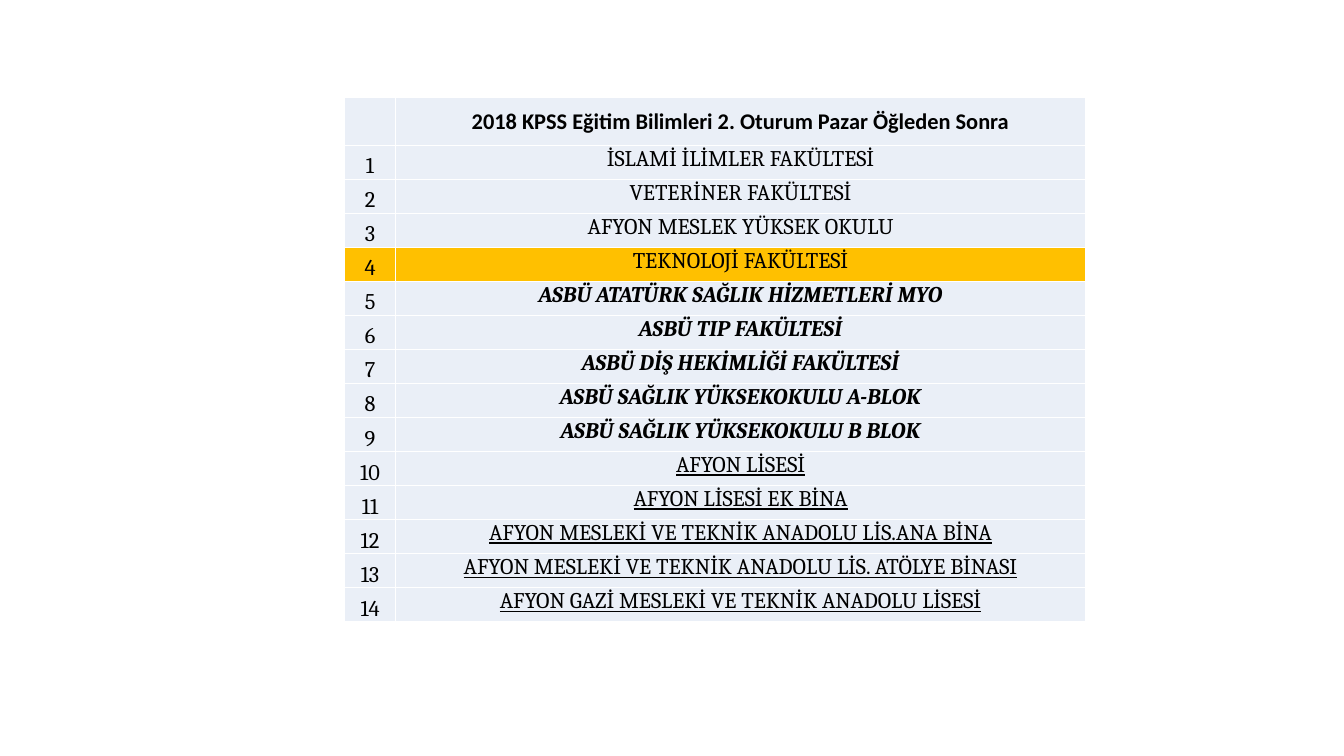
from lxml.etree import SubElement
from pptx import Presentation
from pptx.dml.color import RGBColor
from pptx.enum.text import MSO_ANCHOR, PP_ALIGN
from pptx.oxml.ns import qn
from pptx.util import Inches, Pt

COLORS = {"band": "EAEFF7", "highlight": "FFC000", "border": "FFFFFF", "text": "000000"}
HEADING = "2018 KPSS Eğitim Bilimleri 2. Oturum Pazar Öğleden Sonra"
FACULTIES = [
    "İSLAMİ İLİMLER FAKÜLTESİ",
    "VETERİNER FAKÜLTESİ",
    "AFYON MESLEK YÜKSEK OKULU",
    "TEKNOLOJİ FAKÜLTESİ",
]
HEALTH_SCHOOLS = [
    "ASBÜ ATATÜRK SAĞLIK HİZMETLERİ MYO",
    "ASBÜ TIP FAKÜLTESİ",
    "ASBÜ DİŞ HEKİMLİĞİ FAKÜLTESİ",
    "ASBÜ SAĞLIK YÜKSEKOKULU A-BLOK",
    "ASBÜ SAĞLIK YÜKSEKOKULU B BLOK",
]
HIGH_SCHOOLS = [
    "AFYON LİSESİ",
    "AFYON LİSESİ EK BİNA",
    "AFYON MESLEKİ VE TEKNİK ANADOLU LİS.ANA BİNA",
    "AFYON MESLEKİ VE TEKNİK ANADOLU LİS. ATÖLYE BİNASI",
    "AFYON GAZİ MESLEKİ VE TEKNİK ANADOLU LİSESİ",
]
BUILDINGS = FACULTIES + HEALTH_SCHOOLS + HIGH_SCHOOLS
HIGHLIGHTED = "TEKNOLOJİ FAKÜLTESİ"
NUMBER_WIDTH = 0.5
HEADING_HEIGHT = 0.47


def paint_cell(cell, color):
    """Give the cell thin borders on all sides and a solid fill."""
    properties = cell._tc.get_or_add_tcPr()
    for side in ("a:lnL", "a:lnR", "a:lnT", "a:lnB"):
        border = SubElement(properties, qn(side), w=str(Pt(1)))
        solid = SubElement(border, qn("a:solidFill"))
        SubElement(solid, qn("a:srgbClr"), val=COLORS["border"])
    cell.fill.solid()
    cell.fill.fore_color.rgb = RGBColor.from_string(COLORS[color])


def write_cell(cell, text, anchor, font_name="Cambria", bold=False, italic=False, underline=False):
    cell.margin_left = cell.margin_right = cell.margin_top = Inches(0.01)
    cell.margin_bottom = 0
    cell.vertical_anchor = anchor
    cell.text = text
    paragraph = cell.text_frame.paragraphs[0]
    paragraph.alignment = PP_ALIGN.CENTER
    font = paragraph.font
    font.name, font.size = font_name, Pt(16)
    font.bold, font.italic, font.underline = bold, italic, underline
    font.color.rgb = RGBColor.from_string(COLORS["text"])


def add_building_table(slide, left, top, width, height):
    table = slide.shapes.add_table(
        len(BUILDINGS) + 1, 2, Inches(left), Inches(top), Inches(width), Inches(height)
    ).table
    table.columns[0].width = Inches(NUMBER_WIDTH)
    table.columns[1].width = Inches(width - NUMBER_WIDTH)
    for row in table.rows:
        row.height = Inches((height - HEADING_HEIGHT) / len(BUILDINGS))
    table.rows[0].height = Inches(HEADING_HEIGHT)

    for cell in table.rows[0].cells:
        paint_cell(cell, "band")
    write_cell(table.cell(0, 1), HEADING, MSO_ANCHOR.MIDDLE, "Calibri", bold=True)

    for number, building in enumerate(BUILDINGS, start=1):
        number_cell, building_cell = table.rows[number].cells
        for cell in (number_cell, building_cell):
            paint_cell(cell, "highlight" if building == HIGHLIGHTED else "band")
        write_cell(number_cell, str(number), MSO_ANCHOR.BOTTOM)
        is_health = building in HEALTH_SCHOOLS
        write_cell(building_cell, building, MSO_ANCHOR.TOP, bold=is_health,
                   italic=is_health, underline=building in HIGH_SCHOOLS)


def main():
    presentation = Presentation()
    presentation.slide_width = Inches(13.33)
    presentation.slide_height = Inches(7.5)
    slide = presentation.slides.add_slide(presentation.slide_layouts[6])
    add_building_table(slide, 3.42, 0.97, 7.35, 5.2)
    presentation.save("out.pptx")


if __name__ == "__main__":
    main()
